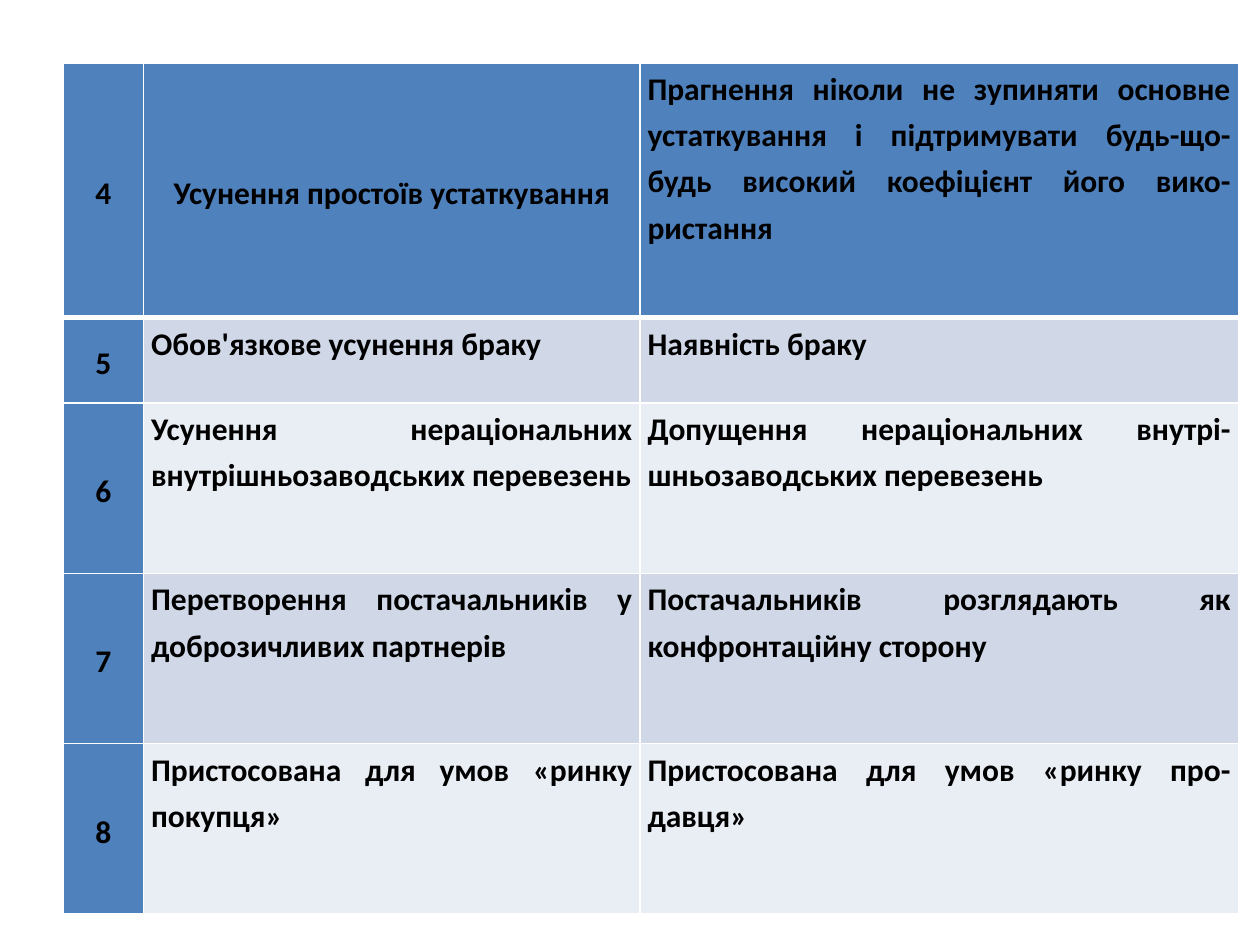
from pptx import Presentation
from pptx.dml.color import RGBColor
from pptx.enum.text import MSO_ANCHOR as Anchor, PP_ALIGN as Align
from pptx.oxml.ns import qn
from pptx.util import Inches, Pt
from lxml.etree import SubElement

BLUE = RGBColor(0x4F, 0x81, 0xBD)
BAND_DARK = RGBColor(0xD0, 0xD8, 0xE8)
BAND_LIGHT = RGBColor(0xE9, 0xED, 0xF4)
BLACK = RGBColor(0, 0, 0)
WHITE = RGBColor(0xFF, 0xFF, 0xFF)

COLUMN_WIDTHS = (0.64, 3.94, 4.75)
ROW_HEIGHTS = (2.02, 0.68, 1.35, 1.35, 1.35)
FIRST_NUMBER = 4
COMPARISON = [
    ("Усунення простоїв устаткування",
     "Прагнення ніколи не зупиняти основне устаткування і підтримувати "
     "будь-що-будь високий коефіцієнт його вико- ристання"),
    ("Обов'язкове усунення браку", "Наявність браку"),
    ("Усунення нераціональних внутрішньозаводських перевезень",
     "Допущення нераціональних внутрі-шньозаводських перевезень"),
    ("Перетворення постачальників у доброзичливих партнерів",
     "Постачальників розглядають як конфронтаційну сторону"),
    ("Пристосована для умов «ринку покупця»",
     "Пристосована для умов «ринку про-давця»"),
]


def set_borders(cell, widths):
    """Draw white borders; widths are in points: left, right, top, bottom."""
    properties = cell._tc.get_or_add_tcPr()
    for index, (side, width) in enumerate(zip("LRTB", widths)):
        line = SubElement(properties, qn(f"a:ln{side}"), w=str(Pt(width)))
        fill = SubElement(line, qn("a:solidFill"))
        SubElement(fill, qn("a:srgbClr"), val=str(WHITE))
        properties.insert(index, line)  # borders come before the cell fill


def format_cell(cell, text, fill, centred):
    cell.fill.solid()
    cell.fill.fore_color.rgb = fill
    cell.margin_left = cell.margin_right = Inches(0.06)
    cell.margin_top = cell.margin_bottom = 0
    cell.vertical_anchor = Anchor.MIDDLE if centred else Anchor.TOP
    cell.text_frame.text = text
    paragraph = cell.text_frame.paragraphs[0]
    paragraph.alignment = Align.CENTER if centred else Align.JUSTIFY
    paragraph.line_spacing = 1.2
    font = paragraph.runs[0].font
    font.name, font.size, font.bold = "Calibri", Pt(18), True
    font.color.rgb = BLACK


def add_comparison_table(slide, left, top, width, height):
    table = slide.shapes.add_table(
        len(ROW_HEIGHTS), len(COLUMN_WIDTHS), left, top, width, height).table
    table.first_col = True
    for column, share in zip(table.columns, COLUMN_WIDTHS):
        column.width = int(width * share / sum(COLUMN_WIDTHS))
    for row, share in zip(table.rows, ROW_HEIGHTS):
        row.height = int(height * share / sum(ROW_HEIGHTS))

    for row, texts in enumerate(COMPARISON):
        band = BAND_DARK if row % 2 else BAND_LIGHT
        for column, text in enumerate((str(FIRST_NUMBER + row), *texts)):
            cell = table.cell(row, column)
            # The top row and the number column are solid blue
            fill = BLUE if row == 0 or column == 0 else band
            centred = column == 0 or (row == 0 and column == 1)
            format_cell(cell, text, fill, centred)
            # A thick rule separates the top row from the rest
            set_borders(cell, (1, 1, 3 if row == 1 else 1, 3 if row == 0 else 1))


def main():
    presentation = Presentation()
    presentation.slide_width = Inches(10)
    presentation.slide_height = Inches(7.5)
    slide = presentation.slides.add_slide(presentation.slide_layouts[6])
    add_comparison_table(slide, Inches(0.5), Inches(0.5), Inches(9.33), Inches(6.75))
    presentation.save("out.pptx")


if __name__ == "__main__":
    main()
